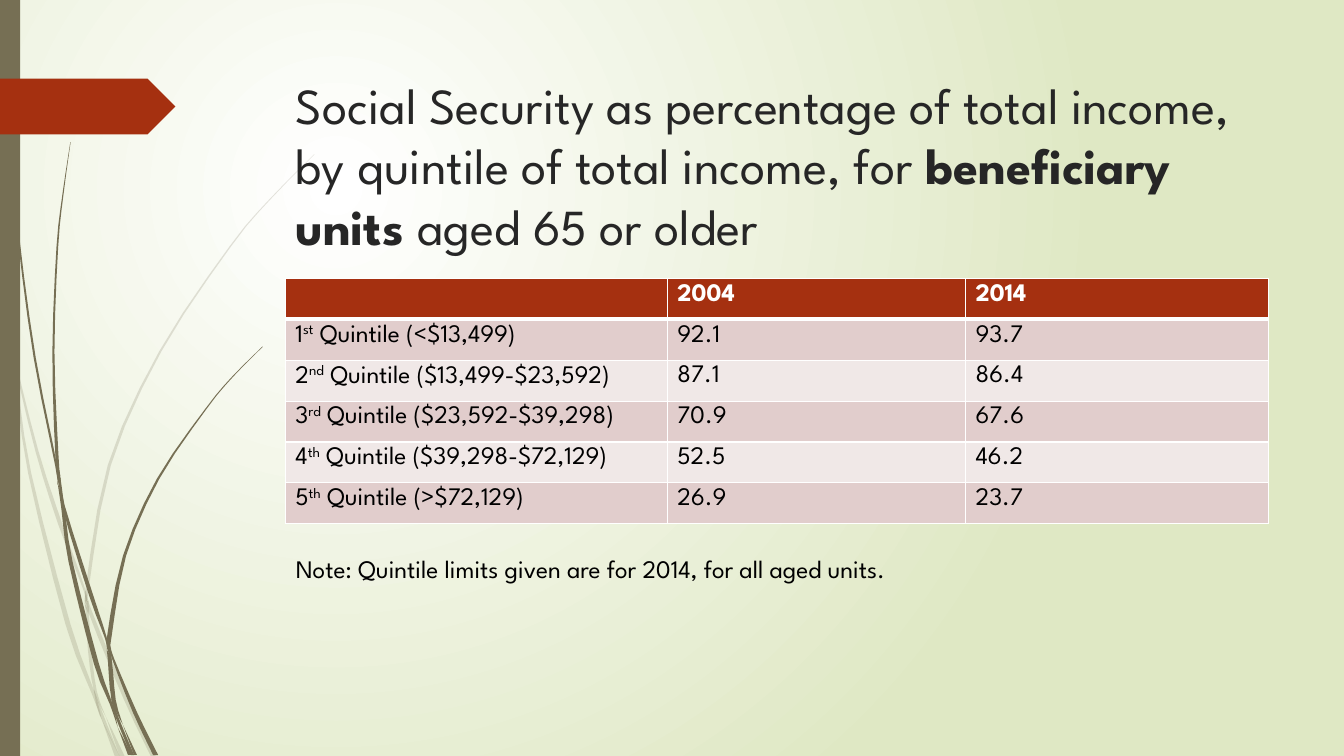
"""Build the slide on Social Security as a share of income by quintile."""
from lxml import etree
from pptx import Presentation
from pptx.dml.color import RGBColor
from pptx.enum.shapes import MSO_SHAPE as SHAPE
from pptx.oxml import parse_xml
from pptx.oxml.ns import nsdecls, qn
from pptx.util import Pt

WHITE = RGBColor(0xFF, 0xFF, 0xFF)
BLACK = RGBColor(0x00, 0x00, 0x00)
INK = RGBColor(0x26, 0x26, 0x26)
GREEN = RGBColor(0xDF, 0xE8, 0xC4)
OLIVE = RGBColor(0x76, 0x6F, 0x54)
RUST = RGBColor(0xA5, 0x30, 0x10)
ROSE = RGBColor(0xE1, 0xCD, 0xCC)
PALE_ROSE = RGBColor(0xF0, 0xE8, 0xE7)
FONT = "League Spartan"

FAINT_BLADES = [
    [(0, 203, 0), (1.4, 215.3, 2.8), (6.9, 240, 1), (7.9, 252, 0)],
    [(10.1, 248.4, 0), (11.6, 262, 1.2), (26.3, 322, 2.2), (43.2, 375, 3),
     (60.5, 422, 1.4), (60.5, 431.3, 0)],
    [(63.4, 429, 0), (64.8, 438, 2.8), (90, 499.4, 3.2), (109.8, 540.7, 3.6)],
    [(75.6, 512, 0), (87.5, 540.7, 3.6)],
    [(7.9, 252, 0), (11.5, 272, 1.2), (21.2, 338, 2.2), (48.6, 446, 3.6),
     (66.6, 495, 2.4), (72.7, 514, 0)],
    [(60.5, 431.3, 0), (62.4, 439, 2), (64.1, 465, 2.4), (68.2, 494, 2), (75.6, 512, 0)],
    [(224.6, 110.2, 0.4), (193, 142.2, 0.8), (164.5, 176, 1.1), (114.5, 251, 1.6),
     (78.1, 332.3, 2.2), (62.3, 420.5, 2.2), (63.4, 429, 0)],
    [(72.7, 514, 0), (83.9, 540.7, 3.6)],
    [(61.2, 422, 0), (61.9, 431, 2.8), (63.4, 439, 0)],
    [(67, 492, 0), (72.2, 510, 2.7), (85.7, 540.7, 0)],
]
BLADES = [
    [(2.5, 0, 0.5), (3.2, 35, 0.7), (5.4, 79, 0.8), (13, 167.4, 1.2),
     (24.8, 255.6, 1.5), (40.2, 333, 1.4), (41, 346.3, 0)],
    [(43.2, 340, 0), (45.2, 361, 2), (65.2, 425.5, 3), (75.7, 456, 1.4), (76.3, 464.4, 0)],
    [(79.2, 461.5, 0), (80.6, 470, 1.5), (96.5, 509, 3), (111.2, 539.3, 3.6)],
    [(41, 343.4, 0), (45, 363.6, 2.2), (50.4, 401, 2.9), (68.8, 473.8, 3.6),
     (79.5, 503, 2), (84.2, 519.8, 0)],
    [(50.4, 101.5, 0.2), (45, 139, 0.8), (41, 176.4, 1.2), (38.2, 251.3, 1.5),
     (40.7, 325, 2.2), (43.2, 340, 0)],
    [(87.8, 517.7, 0), (96.8, 539.3, 2.2)],
    [(39.6, 323, 0), (42.1, 341.5, 2.2), (46.1, 363.6, 0)],
    [(187.6, 247.7, 0.4), (166.3, 269, 0.8), (147.2, 292, 1), (113, 342, 1.8),
     (89, 397, 2.2), (78.1, 455, 3.2), (79.2, 461.5, 0)],
    [(84.2, 519.8, 0), (92.9, 539.3, 2.9)],
    [(76.3, 464.4, 0), (78.5, 472, 2.8), (81.2, 500, 3), (87.8, 517.7, 0)],
    [(76.3, 454, 0), (77.8, 463, 2.6), (79.9, 472, 0)],
    [(79.2, 497.5, 0), (83.9, 513, 2), (94.7, 539.3, 2.2)],
]
COLUMNS = [272.9, 213, 216.2]
ROW_HEIGHT = 29.2
QUINTILES = [
    ("1", "st", " Quintile (<$13,499)", "92.1", "93.7"),
    ("2", "nd", " Quintile ($13,499-$23,592)", "87.1", "86.4"),
    ("3", "rd", " Quintile ($23,592-$39,298)", "70.9", "67.6"),
    ("4", "th", " Quintile ($39,298-$72,129)", "52.5", "46.2"),
    ("5", "th", " Quintile (>$72,129)", "26.9", "23.7"),
]


def smooth(knots, steps=3):
    """Return points on a Catmull-Rom curve through the knots."""
    ends = [knots[0], *knots, knots[-1]]
    curve = []
    for quad in zip(ends, ends[1:], ends[2:], ends[3:]):
        for i in range(steps):
            t = i / steps
            curve.append([b + t * (c - a) / 2 + t**2 * (2*a - 5*b + 4*c - d) / 2
                          + t**3 * (3*b - a - 3*c + d) / 2 for a, b, c, d in zip(*quad)])
    return curve + [knots[-1]]


def paint(sp, color):
    """Give a shape a plain fill with no line or shadow."""
    sp.shadow.inherit = False
    sp.fill.solid()
    sp.fill.fore_color.rgb = color
    sp.line.fill.background()


prs = Presentation()
prs.slide_width, prs.slide_height = Pt(960), Pt(540)
s = prs.slides.add_slide(prs.slide_layouts[6])

fill = s.background.fill
fill.gradient()
for stop, color in zip(fill.gradient_stops, (WHITE, GREEN)):
    stop.color.rgb = color
lin = s.background._cSld.find(".//" + qn("a:lin"))
lin.getparent().replace(lin, parse_xml(
    f'<a:path {nsdecls("a")} path="circle">'
    '<a:fillToRect l="50000" t="50000" r="100000" b="100000"/></a:path>'))

for blades, alpha in ((FAINT_BLADES, 20), (BLADES, 100)):
    for blade in blades:
        curve = smooth(blade) if len(blade) > 2 else blade
        edges = [(x - w / 2, y) for x, y, w in curve]
        edges += [(x + w / 2, y) for x, y, w in reversed(curve)]
        outline = [(Pt(max(x, 0)), Pt(y)) for x, y in edges]
        fb = s.shapes.build_freeform(*outline[0])
        fb.add_line_segments(outline[1:])
        sp = fb.convert_to_shape()
        paint(sp, OLIVE)
        if alpha < 100:
            rgb = sp._element.spPr.find(".//" + qn("a:srgbClr"))
            etree.SubElement(rgb, qn("a:alpha"), val=str(alpha * 1000))

paint(s.shapes.add_shape(SHAPE.RECTANGLE, 0, 0, Pt(14.4), Pt(540)), OLIVE)
paint(s.shapes.add_shape(SHAPE.PENTAGON, 0, Pt(56.2), Pt(125.3), Pt(39.8)), RUST)

tf = s.shapes.add_textbox(Pt(204.2), Pt(49.2), Pt(702), Pt(149.8)).text_frame
tf.word_wrap = True
p = tf.paragraphs[0]
p.font.name, p.font.size, p.font.color.rgb = FONT, Pt(36), INK
for text, bold in (
        ("Social Security as percentage of total income, by quintile of total income, for ", False),
        ("beneficiary units ", True), ("aged 65 or older", False)):
    r = p.add_run()
    r.text, r.font.bold = text, bold

table = s.shapes.add_table(6, 3, Pt(203.8), Pt(198.9), Pt(sum(COLUMNS)), Pt(6 * ROW_HEIGHT)).table
for column, width in zip(table.columns, COLUMNS):
    column.width = Pt(width)
rows = [((), ("2004",), ("2014",))]
rows += [((n, suffix, limits), (a,), (b,)) for n, suffix, limits, a, b in QUINTILES]
for i, row in enumerate(rows):
    table.rows[i].height = Pt(ROW_HEIGHT)
    for j, texts in enumerate(row):
        cell = table.cell(i, j)
        cell.fill.solid()
        cell.fill.fore_color.rgb = RUST if i == 0 else ROSE if i % 2 else PALE_ROSE
        p = cell.text_frame.paragraphs[0]
        p.font.name, p.font.size = FONT, Pt(18)
        p.font.bold, p.font.color.rgb = i == 0, BLACK if i else WHITE
        for k, text in enumerate(texts):
            r = p.add_run()
            r.text = text
            if k == 1:
                r.font._element.set("baseline", "30000")
        tcPr = cell._tc.get_or_add_tcPr()
        for k, side in enumerate(("lnL", "lnR", "lnT", "lnB")):
            thick = (i, side) in ((0, "lnB"), (1, "lnT"))
            tcPr.insert(k, parse_xml(
                f'<a:{side} {nsdecls("a")} w="{Pt(3 if thick else 1)}"><a:solidFill>'
                f'<a:srgbClr val="{WHITE}"/></a:solidFill></a:{side}>'))

tf = s.shapes.add_textbox(Pt(204.2), Pt(391.7), Pt(501), Pt(28.8)).text_frame
tf.word_wrap = True
p = tf.paragraphs[0]
p.text = "Note: Quintile limits given are for 2014, for all aged units."
p.font.name, p.font.size, p.font.color.rgb = FONT, Pt(18), BLACK

prs.save("out.pptx")
